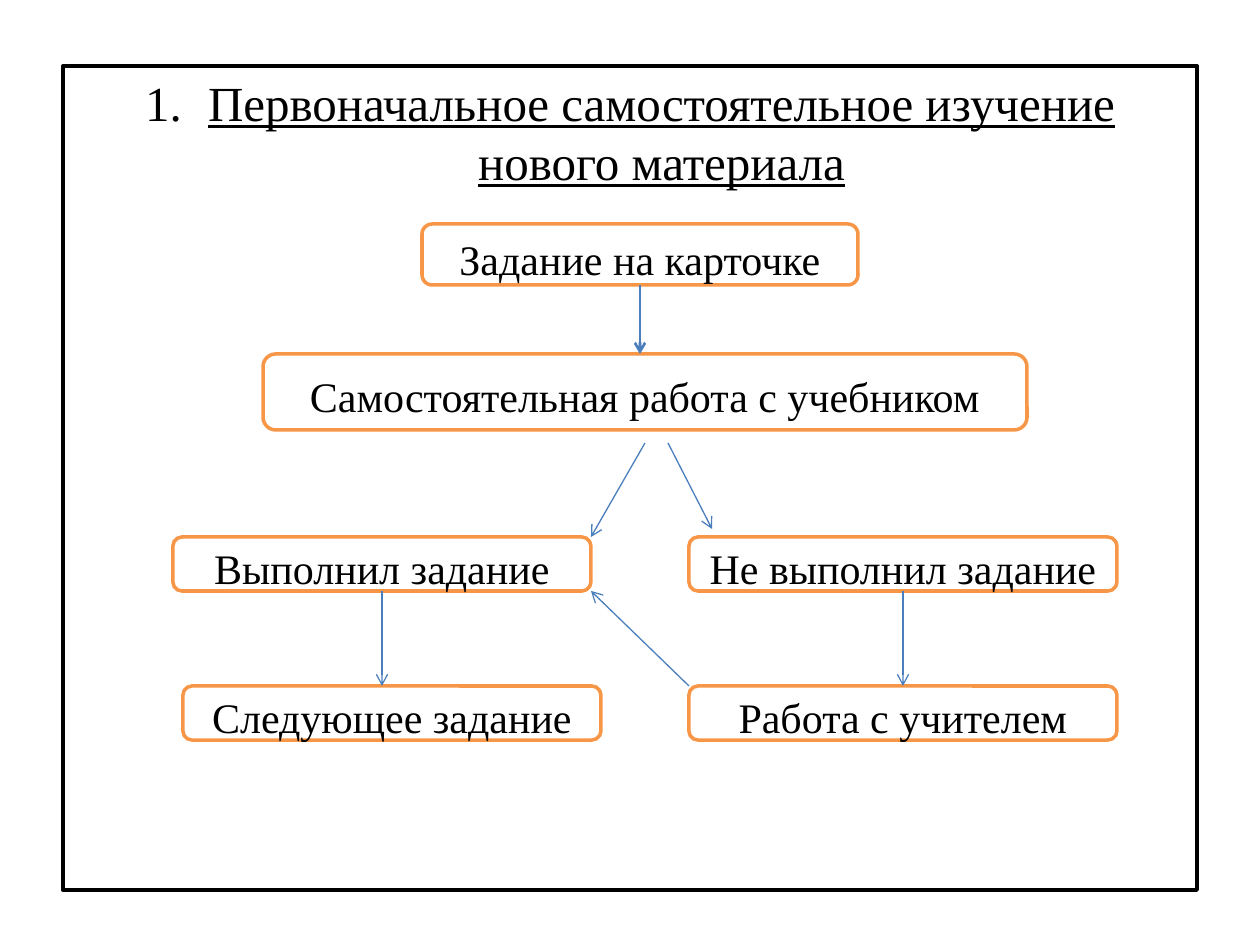
from lxml.etree import SubElement
from pptx import Presentation
from pptx.dml.color import RGBColor
from pptx.enum.shapes import MSO_CONNECTOR, MSO_SHAPE
from pptx.enum.text import MSO_ANCHOR, MSO_AUTO_SIZE, PP_ALIGN
from pptx.oxml.ns import qn
from pptx.util import Emu, Pt

COLORS = {"ink": "000000", "paper": "FFFFFF", "edge": "F79646", "arrow": "4B7EBC"}
FONT = "Times New Roman"
SCALE = 914400 / 126


def px(count):
    return Emu(round(count * SCALE))


def tint(name):
    return RGBColor.from_string(COLORS[name])


class Board:
    def __init__(self, slide):
        self.slide = slide

    def stroke(self, item, name, width):
        item.line.color.rgb = tint(name)
        item.line.width = Pt(width)

    def label(self, frame, text, size, line=False):
        frame.text = text
        frame.word_wrap = True
        para = frame.paragraphs[0]
        para.alignment = PP_ALIGN.CENTER
        for run in para.runs:
            font = run.font
            font.name, font.size = FONT, Pt(size)
            font.color.rgb = tint("ink")
            font.underline = line
        return para

    def title(self, text, left, top, width, height):
        head = self.slide.shapes.title
        head.left, head.top = px(left), px(top)
        head.width, head.height = px(width), px(height)
        self.stroke(head, "ink", 2.25)
        frame = head.text_frame
        frame.vertical_anchor = MSO_ANCHOR.TOP
        frame.auto_size = MSO_AUTO_SIZE.NONE
        para = self.label(frame, text, 28, True)
        para.space_before = Pt(5.6)
        props = para._p.get_or_add_pPr()
        props.set("marL", str(px(63)))
        props.set("indent", str(-px(63)))
        SubElement(props, qn("a:buFont")).set("typeface", FONT)
        SubElement(props, qn("a:buAutoNum")).set("type", "arabicPeriod")

    def box(self, text, left, top, width, height):
        shape = self.slide.shapes.add_shape(
            MSO_SHAPE.ROUNDED_RECTANGLE, px(left), px(top), px(width), px(height))
        shape.shadow.inherit = False
        shape.fill.solid()
        shape.fill.fore_color.rgb = tint("paper")
        self.stroke(shape, "edge", 2)
        shape.text_frame.vertical_anchor = MSO_ANCHOR.MIDDLE
        para = self.label(shape.text_frame, text, 24)
        para.line_spacing = 1.15
        para.space_after = Pt(10)
        return shape

    def arrow(self, start, stop, first=None, last=None, width=0.75):
        link = self.slide.shapes.add_connector(
            MSO_CONNECTOR.STRAIGHT, *map(px, start + stop))
        if first:
            link.begin_connect(first, 2)
        if last:
            link.end_connect(last, 0)
        self.stroke(link, "arrow", width)
        props = link._element.spPr
        SubElement(props.find(qn("a:ln")), qn("a:tailEnd")).set("type", "arrow")
        SubElement(props, qn("a:effectLst"))


def main():
    deck = Presentation()
    deck.slide_width, deck.slide_height = px(1260), px(945)
    board = Board(deck.slides.add_slide(deck.slide_layouts[5]))
    board.title("Первоначальное самостоятельное изучение нового материала",
                63, 66, 1134, 824)

    card = board.box("Задание на карточке", 422, 224, 436, 61)
    board.box("Самостоятельная работа с учебником", 263, 354, 764, 76)
    done = board.box("Выполнил задание", 173, 537, 418, 54)
    fail = board.box("Не выполнил задание", 689, 537, 428, 54)
    board.box("Следующее задание", 183, 686, 418, 54)
    tutor = board.box("Работа с учителем", 689, 686, 428, 54)

    board.arrow((640, 285), (640, 354), card, width=1.5)
    board.arrow((645, 443), (591, 537))
    board.arrow((668, 443), (712, 529))
    board.arrow((382, 591), (382, 686), done)
    board.arrow((903, 591), (903, 686), fail, tutor)
    board.arrow((689, 686), (591, 591))
    deck.save("out.pptx")


if __name__ == "__main__":
    main()
